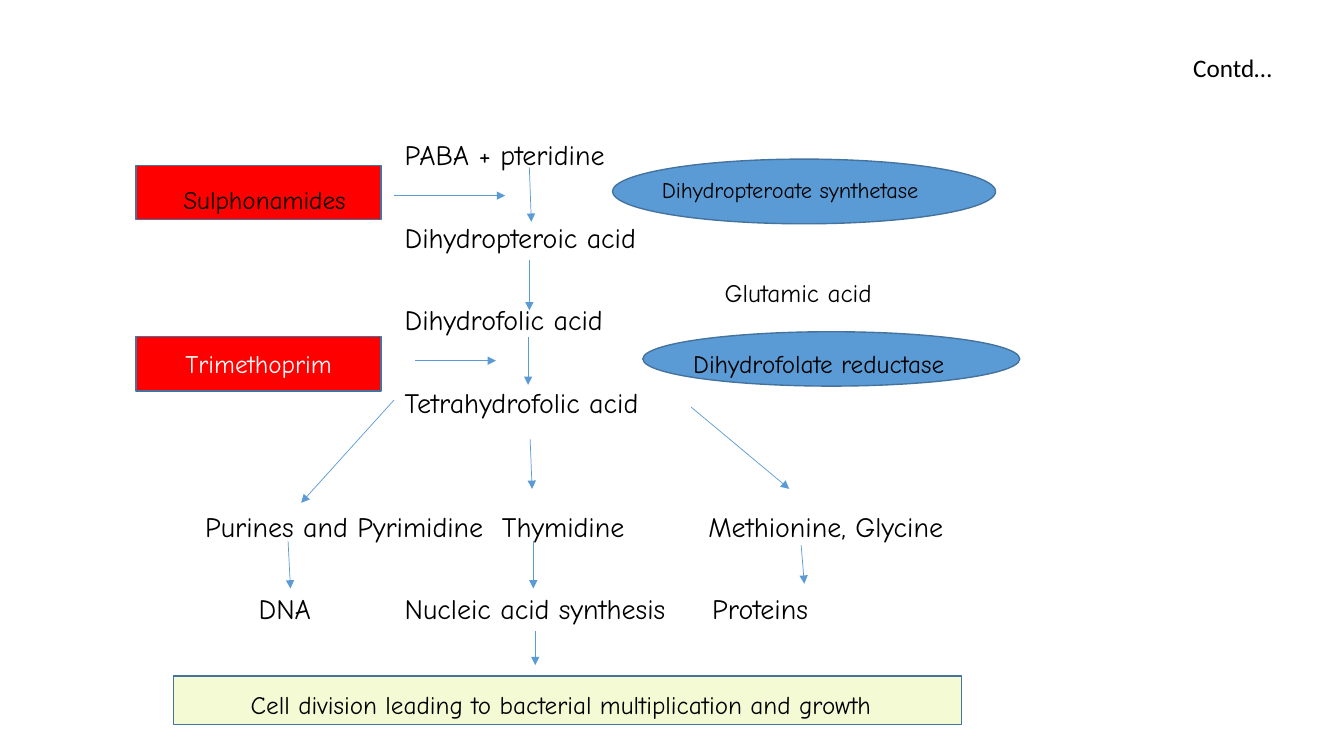
from lxml.etree import SubElement
from pptx import Presentation
from pptx.dml.color import RGBColor
from pptx.enum.shapes import MSO_CONNECTOR, MSO_SHAPE
from pptx.enum.text import MSO_ANCHOR, PP_ALIGN
from pptx.oxml.ns import qn
from pptx.util import Cm, Pt

BLACK = RGBColor(0x00, 0x00, 0x00)
WHITE = RGBColor(0xFF, 0xFF, 0xFF)
RED = RGBColor(0xFF, 0x00, 0x00)
BLUE = RGBColor(0x5B, 0x9B, 0xD5)
OUTLINE = RGBColor(0x43, 0x73, 0x9E)
CREAM = RGBColor(0xF4, 0xFA, 0xD4)

FIRST_ROW = 3.35
ROW_PITCH = 1.04
LINE_HEIGHT = 1.02


def write(frame, text, size, name="Comic Neue", color=BLACK):
    frame.word_wrap = True
    para = frame.paragraphs[0]
    span = para.add_run()
    span.text = text
    font_values = {"name": name, "size": Pt(size)}
    for key, value in font_values.items():
        setattr(span.font, key, value)
    span.font.color.rgb = color
    return para


def add_label(page, text, left, top, width, size, name="Comic Neue"):
    box = page.shapes.add_textbox(Cm(left), Cm(top), Cm(width), Cm(LINE_HEIGHT))
    write(box.text_frame, text, size, name)


deck = Presentation()
deck.slide_width, deck.slide_height = Cm(33.87), Cm(19.05)
page = deck.slides.add_slide(deck.slide_layouts[6])

# Heading
add_label(page, "Contd…", 29.82, 1.2, 2.57, 18, "Calibri")

# Pathway steps: text, row, left, width
steps = [
    ("PABA + pteridine", 0, 9.95, 7),
    ("Dihydropteroic acid", 2, 9.95, 7),
    ("Dihydrofolic acid", 4, 9.95, 7),
    ("Tetrahydrofolic acid", 6, 9.95, 7),
    ("Purines and Pyrimidine", 9, 4.92, 7.8),
    ("Thymidine", 9, 12.4, 4),
    ("Methionine, Glycine", 9, 17.6, 7),
    ("DNA", 11, 6.27, 2.5),
    ("Nucleic acid synthesis", 11, 9.95, 7.5),
    ("Proteins", 11, 17.7, 4),
]
for text, row, left, width in steps:
    add_label(page, text, left, FIRST_ROW + row * ROW_PITCH, width, 20)

# Arrows: start x, start y, end x, end y
arrows = [
    (13.34, 4.22, 13.39, 5.59),
    (13.34, 6.55, 13.34, 7.82),
    (13.31, 8.48, 13.31, 9.7),
    (13.36, 11.07, 13.41, 12.32),
    (13.49, 15.9, 13.49, 16.76),
    (13.44, 13.64, 13.44, 14.83),
    (9.93, 10.08, 7.59, 12.67),
    (17.42, 10.26, 19.89, 12.32),
    (7.26, 13.64, 7.32, 14.83),
    (20.19, 13.74, 20.27, 14.71),
    (9.93, 4.93, 12.73, 4.93),
    (10.46, 9.09, 12.5, 9.09),
]
for ends in arrows:
    arrow = page.shapes.add_connector(MSO_CONNECTOR.STRAIGHT, *map(Cm, ends))
    arrow.line.color.rgb = BLUE
    arrow.line.width = Pt(0.5)
    SubElement(arrow.line._get_or_add_ln(), qn("a:tailEnd"), type="triangle")
    SubElement(arrow._element.spPr, qn("a:effectLst"))

# Drugs, enzymes and outcome: shape, left, top, width, height, fill
panels = {
    "sulphonamides": (MSO_SHAPE.RECTANGLE, 3.43, 4.17, 6.17, 1.37, RED),
    "trimethoprim": (MSO_SHAPE.RECTANGLE, 3.43, 8.48, 6.17, 1.37, RED),
    "outcome": (MSO_SHAPE.RECTANGLE, 4.37, 17.04, 19.86, 1.22, CREAM),
    "synthetase": (MSO_SHAPE.OVAL, 15.44, 4.01, 9.65, 1.63, BLUE),
    "reductase": (MSO_SHAPE.OVAL, 16.2, 8.36, 9.5, 1.37, BLUE),
}
panel_shapes = {}
for panel_name, (kind, left, top, width, height, fill) in panels.items():
    panel = page.shapes.add_shape(kind, Cm(left), Cm(top), Cm(width), Cm(height))
    panel.shadow.inherit = False
    panel.fill.solid()
    panel.fill.fore_color.rgb = fill
    panel.line.color.rgb = OUTLINE
    panel.line.width = Pt(1)
    panel_shapes[panel_name] = panel

frame = panel_shapes["trimethoprim"].text_frame
frame.vertical_anchor = MSO_ANCHOR.MIDDLE
write(frame, "Trimethoprim", 18, color=WHITE).alignment = PP_ALIGN.CENTER

# Captions: text, left, top, width, size
captions = [
    ("Sulphonamides", 4.37, 4.52, 5.23, 18),
    ("Cell division leading to bacterial multiplication and growth", 6.07, 17.25, 17.65, 18),
    ("Dihydropteroate synthetase", 16.43, 4.32, 8.86, 16),
    ("Glutamic acid", 18.01, 6.86, 5.74, 18),
    ("Dihydrofolate reductase", 17.22, 8.66, 8.97, 18),
]
for caption in captions:
    add_label(page, *caption)

deck.save("out.pptx")
